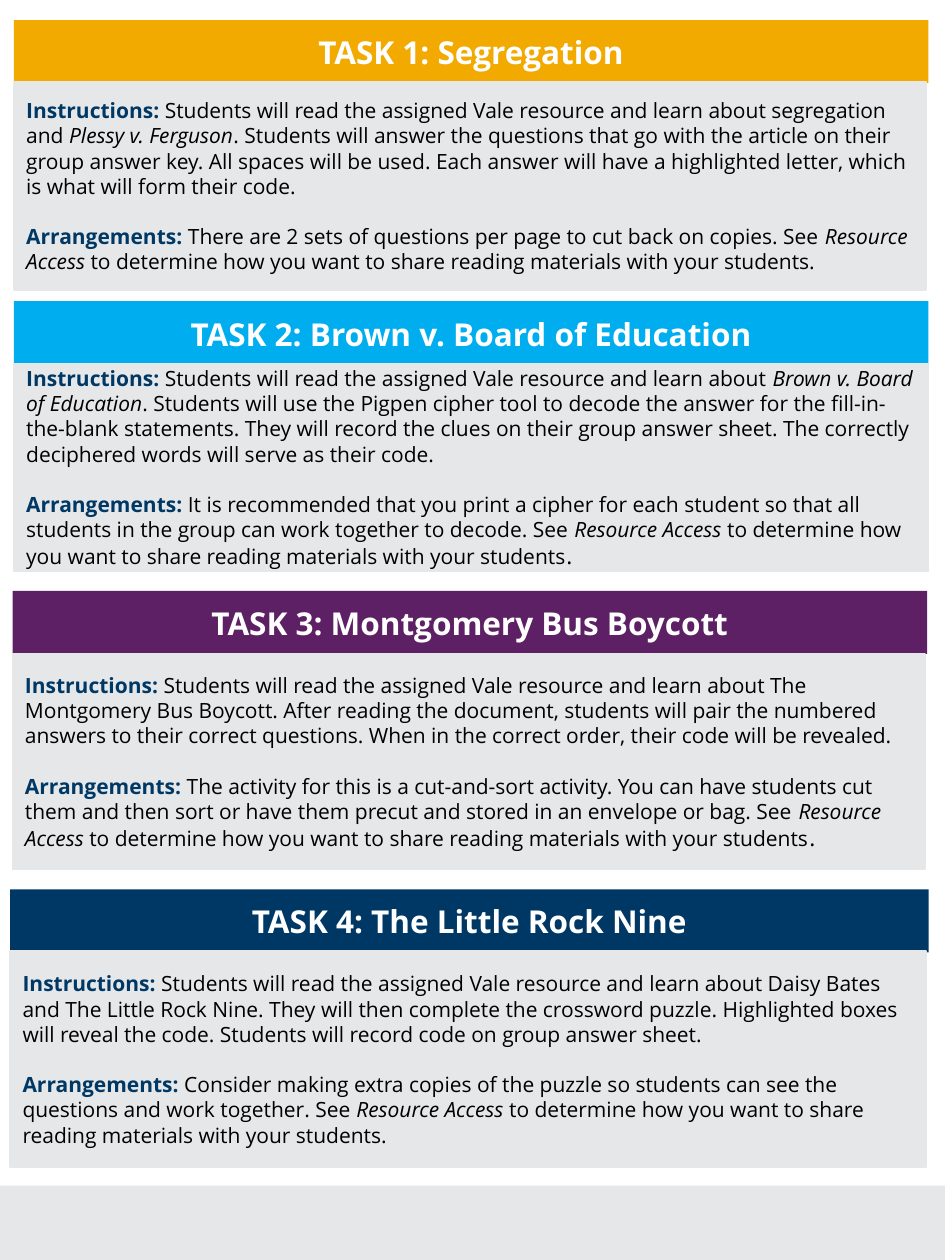
from pptx import Presentation
from pptx.dml.color import RGBColor
from pptx.enum.shapes import MSO_SHAPE
from pptx.enum.text import MSO_ANCHOR, PP_ALIGN
from pptx.util import Pt

FONT = "Open Sans"
PANEL = "E6E7E8"
NAVY = "003865"
BLACK = "000000"
WHITE = "FFFFFF"

HEADING = {"name": FONT, "size": Pt(18), "bold": True}
LABEL = {"name": FONT, "size": Pt(12), "bold": True}
BODY = {"name": FONT, "size": Pt(12), "bold": False, "italic": False}
ITALIC = {**BODY, "italic": True}
LARGE_STOP = {**BODY, "size": Pt(13)}

SHARE = ("See *Resource Access *to determine how you want to share "
         "reading materials with your students")

# Each task: title, colour, banner box, panel box, instructions, arrangements,
# and the format of the closing full stop. Asterisks enclose italics.
TASKS = [
    ("TASK 1: Segregation", "F2A900",
     (7.9, 11.5, 522.7, 36), (7.9, 46.8, 521.3, 118.8),
     "Students will read the assigned Vale resource and learn about segregation "
     "and *Plessy v. Ferguson*. Students will answer the questions that go with "
     "the article on their group answer key. All spaces will be used. Each answer "
     "will have a highlighted letter, which is what will form their code.",
     "There are 2 sets of questions per page to cut back on copies. ", BODY),
    ("TASK 2: Brown v. Board of Education", "00ADEF",
     (7.9, 172.1, 522.7, 37.4), (7.9, 208.1, 522.7, 118.1),
     "Students will read the assigned Vale resource and learn about *Brown v. "
     "Board of Education*. Students will use the Pigpen cipher tool to decode the "
     "answer for the fill-in-the-blank statements. They will record the clues on "
     "their group answer sheet. The correctly deciphered words will serve as "
     "their code.",
     "It is recommended that you print a cipher for each student so that all "
     "students in the group can work together to decode. ", LARGE_STOP),
    ("TASK 3: Montgomery Bus Boycott", "5E2064",
     (7.2, 337.7, 522.7, 36), (7.2, 373.7, 521.3, 123.1),
     "Students will read the assigned Vale resource and learn about The "
     "Montgomery Bus Boycott. After reading the document, students will pair the "
     "numbered answers to their correct questions. When in the correct order, "
     "their code will be revealed.",
     "The activity for this is a cut-and-sort activity. You can have students cut "
     "them and then sort or have them precut and stored in an envelope or bag. ",
     LARGE_STOP),
    ("TASK 4: The Little Rock Nine", NAVY,
     (5.8, 508.3, 524.9, 36), (5.8, 543.6, 523.4, 123.1),
     "Students will read the assigned Vale resource and learn about Daisy Bates "
     "and The Little Rock Nine. They will then complete the crossword puzzle. "
     "Highlighted boxes will reveal the code. Students will record code on group "
     "answer sheet.",
     "Consider making extra copies of the puzzle so students can see the "
     "questions and work together. ", BODY),
]


def color(hex_value):
    return RGBColor.from_string(hex_value)


def add_block(slide, box, fill, outline=None):
    block = slide.shapes.add_shape(MSO_SHAPE.RECTANGLE, *map(Pt, box))
    block.shadow.inherit = False
    block.fill.solid()
    block.fill.fore_color.rgb = color(fill)
    if outline:
        block.line.color.rgb = color(outline)
        block.line.width = Pt(1)
    else:
        block.line.fill.background()
    block.text_frame.word_wrap = True
    block.text_frame.vertical_anchor = MSO_ANCHOR.MIDDLE
    return block


def add_run(paragraph, text, formats, hex_value):
    run = paragraph.add_run()
    run.text = text
    for attribute, value in formats.items():
        setattr(run.font, attribute, value)
    run.font.color.rgb = color(hex_value)


def add_banner(slide, box, title, fill):
    heading = add_block(slide, box, fill).text_frame.paragraphs[0]
    heading.alignment = PP_ALIGN.CENTER
    add_run(heading, title, HEADING, WHITE)


def fill_section(paragraph, label, text):
    paragraph.alignment = PP_ALIGN.LEFT
    add_run(paragraph, label, LABEL, NAVY)
    for index, part in enumerate(text.split("*")):
        add_run(paragraph, part, ITALIC if index % 2 else BODY, BLACK)


def add_panel(slide, box, instructions, arrangements, stop):
    frame = add_block(slide, box, PANEL, PANEL).text_frame
    fill_section(frame.paragraphs[0], "Instructions: ", instructions)
    arrangement = frame.add_paragraph()
    arrangement.space_before = Pt(14.4)
    fill_section(arrangement, "Arrangements: ", arrangements + SHARE)
    add_run(arrangement, ".", stop, BLACK)


def main():
    prs = Presentation()
    prs.slide_width, prs.slide_height = Pt(540), Pt(720)
    slide = prs.slides.add_slide(prs.slide_layouts[6])

    # Footer band
    add_block(slide, (0, 677.5, 540, 42.5), PANEL)

    # Task banners, with the panels over their lower edges
    for title, fill, banner, panel, instructions, arrangements, stop in TASKS:
        add_banner(slide, banner, title, fill)
        add_panel(slide, panel, instructions, arrangements, stop)

    prs.save("out.pptx")


if __name__ == "__main__":
    main()
